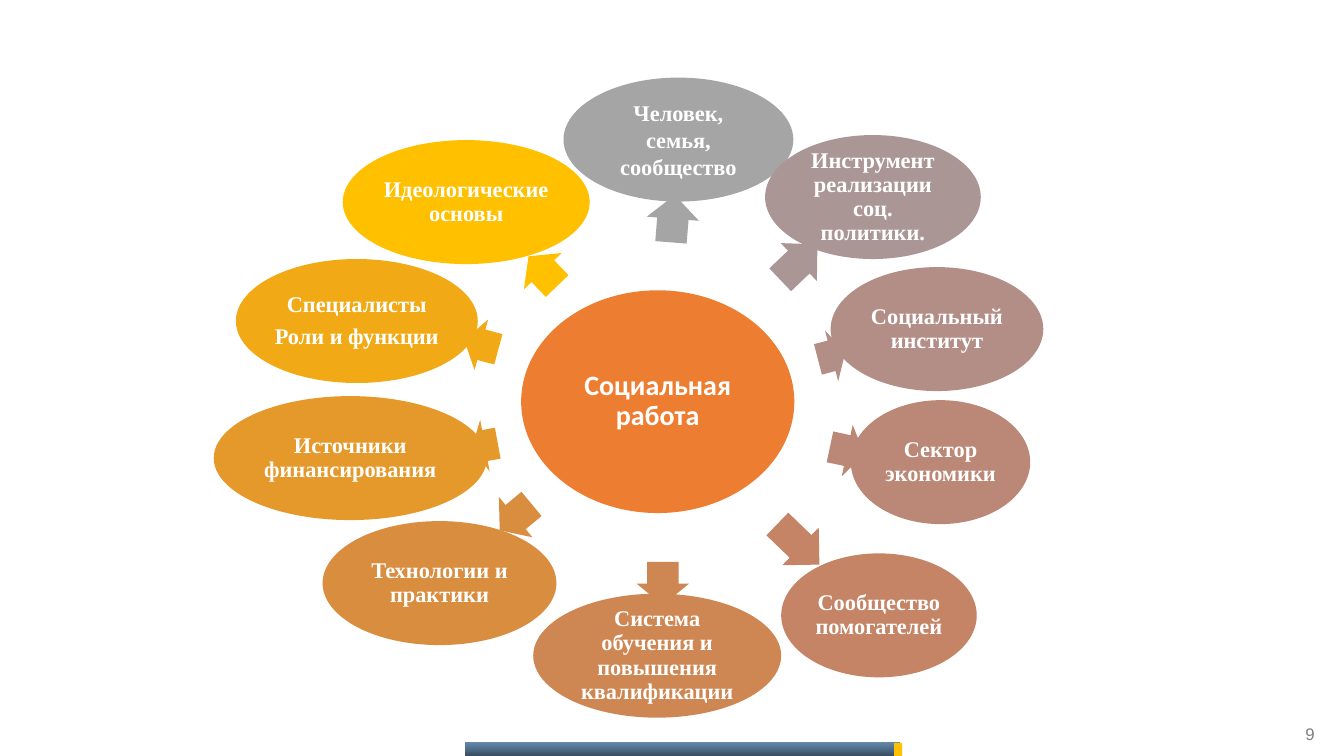
from lxml import etree
from pptx import Presentation
from pptx import util as u
from pptx.dml.color import RGBColor
from pptx.enum import shapes, text
from pptx.oxml.ns import qn

CELL = u.Inches(0.1)
COLUMNS, ROWS = 133.33, 75
SATELLITE_ROWS = 12.3
ARROW_ROWS = 5.2

# label, colour, ellipse (column, row, columns), arrow (column, row, columns, angle)
SATELLITES = [
    (["Человек, семья, сообщество"], "A5A5A5", (55.9, 7.7, 22.8), (64.4, 19.1, 4.7, 274.5)),
    (["Инструмент реализации соц. политики."], "AB9696", (75.9, 13.4, 21.4), (76.7, 23.4, 5.1, 316.4)),
    (["Социальный институт"], "B38E87", (82.4, 26.5, 21.1), (81.1, 32.7, 2.8, 345.4)),
    (["Сектор экономики"], "BB8776", (84.4, 39.7, 17.8), (82.3, 42.1, 3.5, 12)),
    (["Сообщество помогателей"], "C48465", (77.5, 54.9, 19.4), (76.3, 51.4, 5.8, 44)),
    (["Система обучения и повышения квалификации"], "CE8753", (52.9, 58.9, 24.6), (63.6, 55.3, 4.3, 90.1)),
    (["Технологии и практики"], "D98D3F", (32, 51.7, 23.2), (49.1, 48.7, 4.1, 140.3)),
    (["Источники финансирования"], "E5992B", (21.2, 39.3, 27.1), (46.8, 41.6, 2.6, 169.6)),
    (["Специалисты", "Роли и функции"], "F1AA16", (23.4, 25.7, 24), (46, 31.6, 3.5, 195)),
    (["Идеологические основы"], "FFC000", (34, 13.9, 24.5), (51.8, 24.3, 4.1, 226.1)),
]


def colour(code):
    return RGBColor.from_string(code)


def cells(*counts):
    return [u.Emu(round(count * CELL)) for count in counts]


def add_figure(slide, preset, place, fill):
    figure = slide.shapes.add_shape(preset, *cells(*place))
    figure.shadow.inherit = False
    figure.fill.solid()
    figure.fill.fore_color.rgb = colour(fill)
    figure.line.fill.background()
    return figure


def write(frame, lines, font_name, size, ink, bold=False,
          align=text.PP_ALIGN.CENTER, spacing=None):
    frame.word_wrap = True
    frame.vertical_anchor = text.MSO_ANCHOR.MIDDLE
    for index, line in enumerate(lines):
        paragraph = frame.paragraphs[0] if index == 0 else frame.add_paragraph()
        paragraph.text = line
        paragraph.alignment = align
        if spacing:
            paragraph.line_spacing = spacing
            paragraph.space_after = u.Pt(size * 0.35)
        font = paragraph.font
        font.name, font.size, font.bold = font_name, u.Pt(size), bold
        font.color.rgb = colour(ink)


def add_bubble(slide, place, fill, lines, font_name, size, inset, spacing=0.9):
    bubble = add_figure(slide, shapes.MSO_SHAPE.OVAL, place, fill)
    frame = bubble.text_frame
    frame.margin_left = frame.margin_right = u.Inches(inset)
    frame.margin_top = frame.margin_bottom = u.Inches(inset)
    write(frame, lines, font_name, size, "FFFFFF", True, spacing=spacing)


def add_arrow(slide, place, angle, fill):
    arrow = add_figure(slide, shapes.MSO_SHAPE.RIGHT_ARROW, place, fill)
    arrow.adjustments[0], arrow.adjustments[1] = 0.6, 0.5
    arrow.rotation = angle


def add_footer(slide):
    bar = add_figure(slide, shapes.MSO_SHAPE.RECTANGLE, (46.2, 73.7, 43, 1.3), "003C73")
    bar.fill.gradient()
    bar.fill.gradient_angle = 270
    for stop, (code, position, opacity) in zip(
            bar.fill.gradient_stops, [("003C73", 0, 60), ("001C35", 1, 80)]):
        stop.color.rgb = colour(code)
        stop.position = position
    for node, opacity in zip(bar.element.spPr.iter(qn("a:srgbClr")), (60, 80)):
        etree.SubElement(node, qn("a:alpha")).set("val", str(opacity * 1000))
    add_figure(slide, shapes.MSO_SHAPE.RECTANGLE, (88.7, 73.7, 0.8, 1.3), "FFC000")


def main():
    deck = Presentation()
    deck.slide_width, deck.slide_height = cells(COLUMNS, ROWS)
    slide = deck.slides.add_slide(deck.slide_layouts[6])
    add_footer(slide)
    add_bubble(slide, (51.7, 28.8, 27.1, 22.1), "ED7D31", ["Социальная работа"],
               "Calibri", 20, 0.03)
    for index, (lines, fill, ellipse, arrow) in enumerate(SATELLITES):
        column, row, length, angle = arrow
        add_arrow(slide, (column, row, length, ARROW_ROWS), angle, fill)
        add_bubble(slide, (*ellipse, SATELLITE_ROWS), fill, lines, "Times New Roman",
                   16, 0.02, 0.9 if index else None)
    page_number = slide.shapes.add_textbox(*cells(116.4, 71.2, 15, 3.2))
    write(page_number.text_frame, ["9"], "Arial", 12, "7F7F7F", align=text.PP_ALIGN.RIGHT)
    deck.save("out.pptx")


if __name__ == "__main__":
    main()
